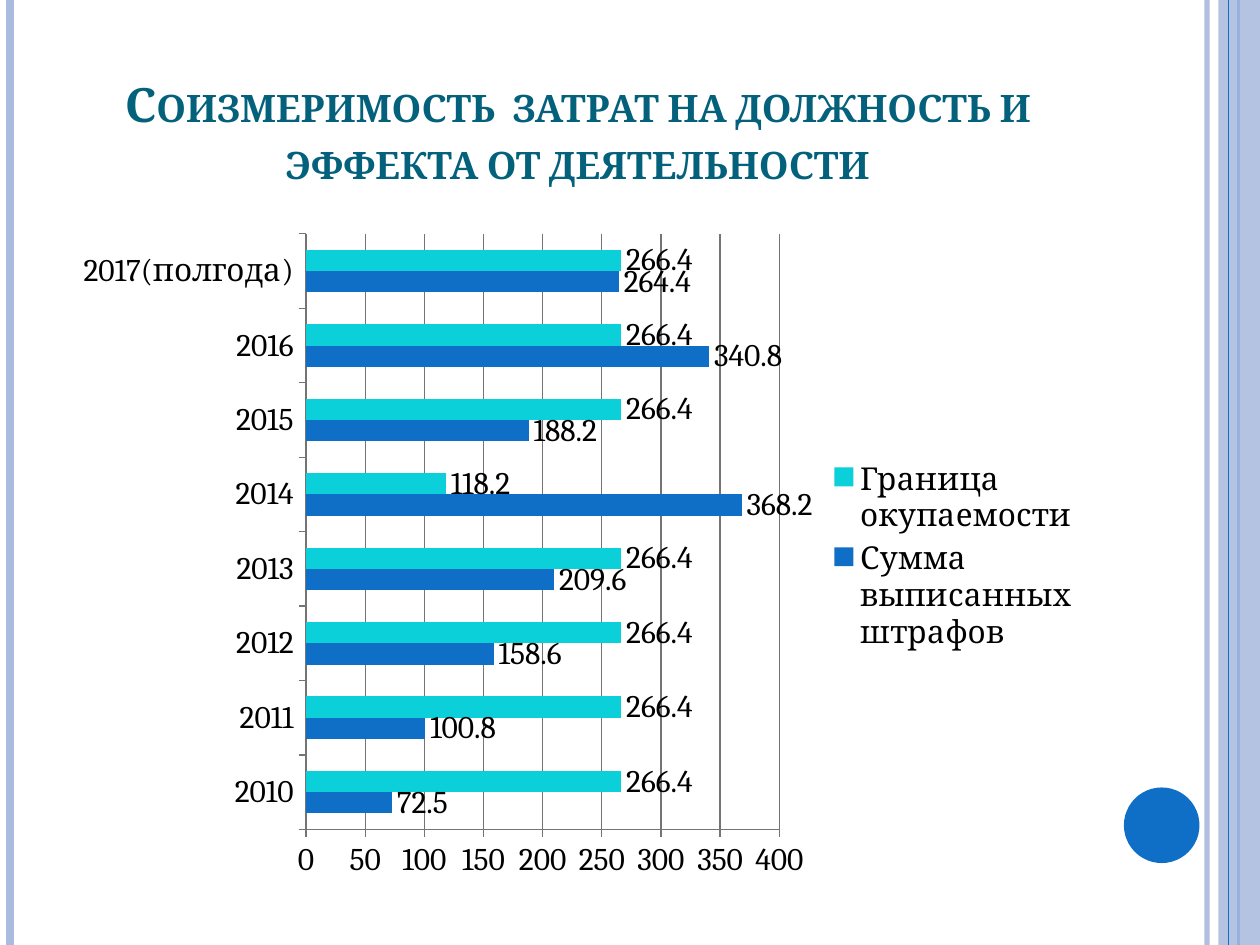
from dataclasses import dataclass

from lxml.etree import SubElement
from pptx import Presentation
from pptx.chart.data import CategoryChartData
from pptx.dml.color import RGBColor
from pptx.enum.chart import XL_CHART_TYPE, XL_LABEL_POSITION, XL_LEGEND_POSITION, XL_TICK_MARK
from pptx.enum.shapes import MSO_CONNECTOR, MSO_SHAPE
from pptx.enum.text import MSO_ANCHOR, PP_ALIGN
from pptx.oxml.ns import qn
from pptx.util import Inches, Pt


@dataclass(frozen=True)
class Theme:
    """Colours, font and type sizes of the slide."""
    font: str = "Cambria"
    head: str = "04617B"
    text: str = "000000"
    blue: str = "0F6FC6"
    sky: str = "009DD9"
    aqua: str = "0BD0D9"
    pale: str = "ABBBDF"
    grid: str = "747474"
    big: int = 27
    small: int = 18


THEME = Theme()
YEARS = ["2010", "2011", "2012", "2013", "2014", "2015", "2016", "2017(полгода)"]
FINES = [72.5, 100.8, 158.6, 209.6, 368.2, 188.2, 340.8, 264.4]
LIMIT = [266.4] * 4 + [118.2] + [266.4] * 3
SERIES = [
    ("Сумма выписанных штрафов", FINES, THEME.blue),
    ("Столбец1", [], THEME.sky),
    ("Граница окупаемости", LIMIT, THEME.aqua),
]


def paint(part, tone, alpha=100):
    """Give a fill a solid colour with an opacity in percent."""
    part.solid()
    part.fore_color.rgb = RGBColor.from_string(tone)
    if alpha < 100:
        node = part._xPr.find(qn("a:solidFill"))[0]
        SubElement(node, qn("a:alpha"), val=str(alpha * 1000))


def style(font, tone, size):
    """Set the face, size and colour of a font."""
    font.name = THEME.font
    font.size = Pt(size)
    font.color.rgb = RGBColor.from_string(tone)


def add_rule(slide, x, top, high, tone, width, alpha=100):
    """Draw an upright line."""
    line = slide.shapes.add_connector(
        MSO_CONNECTOR.STRAIGHT, Inches(x), Inches(top), Inches(x), Inches(top + high))
    paint(line.line.fill, tone, alpha)
    line.line.width = Pt(width)
    SubElement(line._element.spPr, qn("a:effectLst"))


def add_form(slide, kind, box, tone, alpha=100):
    """Draw a plain filled shape without outline."""
    form = slide.shapes.add_shape(kind, *map(Inches, box))
    form.shadow.inherit = False
    paint(form.fill, tone, alpha)
    form.line.fill.background()


def add_frame(slide, box):
    """Draw the side rules, the band and the disc."""
    left, top, wide, high = box
    right = left + wide
    add_rule(slide, right - 0.42, top, high, THEME.pale, 3, 93)
    add_rule(slide, left + 0.08, top, high, THEME.pale, 4.5)
    add_rule(slide, right - 0.17, top, high, THEME.blue, 1.5)
    add_form(slide, MSO_SHAPE.RECTANGLE, (right - 0.33, top, 0.33, high), THEME.pale, 87)
    add_rule(slide, right - 0.25, top, high, THEME.blue, 0.75)
    add_form(slide, MSO_SHAPE.OVAL, (right - 1.08, top + high - 1.25, 0.6, 0.6), THEME.blue)


def add_title(slide, box):
    """Place the heading in small capitals."""
    title = slide.shapes.title
    title.left, title.top, title.width, title.height = map(Inches, box)
    frame = title.text_frame
    frame.word_wrap = True
    frame.vertical_anchor = MSO_ANCHOR.BOTTOM
    para = frame.paragraphs[0]
    para.alignment = PP_ALIGN.CENTER
    run = para.add_run()
    run.text = "Соизмеримость  затрат на должность и эффекта от деятельности"
    style(run.font, THEME.head, THEME.big)
    run.font.bold = True
    run.font._element.set("cap", "small")


def add_bars(slide, box):
    """Place the bar chart of fines against the limit."""
    data = CategoryChartData()
    data.categories = YEARS
    for name, vals, _ in SERIES:
        data.add_series(name, vals)
    chart = slide.shapes.add_chart(
        XL_CHART_TYPE.BAR_CLUSTERED, *map(Inches, box), data).chart
    style(chart.font, THEME.text, THEME.small)
    chart.has_title = False
    chart.has_legend = True
    chart.legend.position = XL_LEGEND_POSITION.RIGHT
    chart.legend.include_in_layout = False

    grid = RGBColor.from_string(THEME.grid)
    for axis in (chart.category_axis, chart.value_axis):
        axis.major_tick_mark = XL_TICK_MARK.OUTSIDE
        axis.format.line.color.rgb = grid
    axis = chart.value_axis
    axis.minimum_scale, axis.maximum_scale, axis.major_unit = 0, 400, 50
    axis.has_major_gridlines = True
    axis.major_gridlines.format.line.color.rgb = grid

    plot = chart.plots[0]
    plot.gap_width, plot.overlap = 150, 0
    plot.vary_by_categories = False
    for bars, (_, _, tone) in zip(plot.series, SERIES):
        paint(bars.format.fill, tone)
        bars.data_labels.show_value = True
        bars.data_labels.position = XL_LABEL_POSITION.OUTSIDE_END
        style(bars.data_labels.font, THEME.text, THEME.small)


def main():
    """Build and save the slide."""
    deck = Presentation()
    deck.slide_width, deck.slide_height = Inches(10), Inches(7.5)
    slide = deck.slides.add_slide(deck.slide_layouts[5])
    add_frame(slide, (0, 0, 10, 7.5))
    add_title(slide, (0.5, 0.3, 8.17, 1.25))
    add_bars(slide, (0.5, 1.75, 8.17, 5.33))
    deck.save("out.pptx")


if __name__ == "__main__":
    main()
